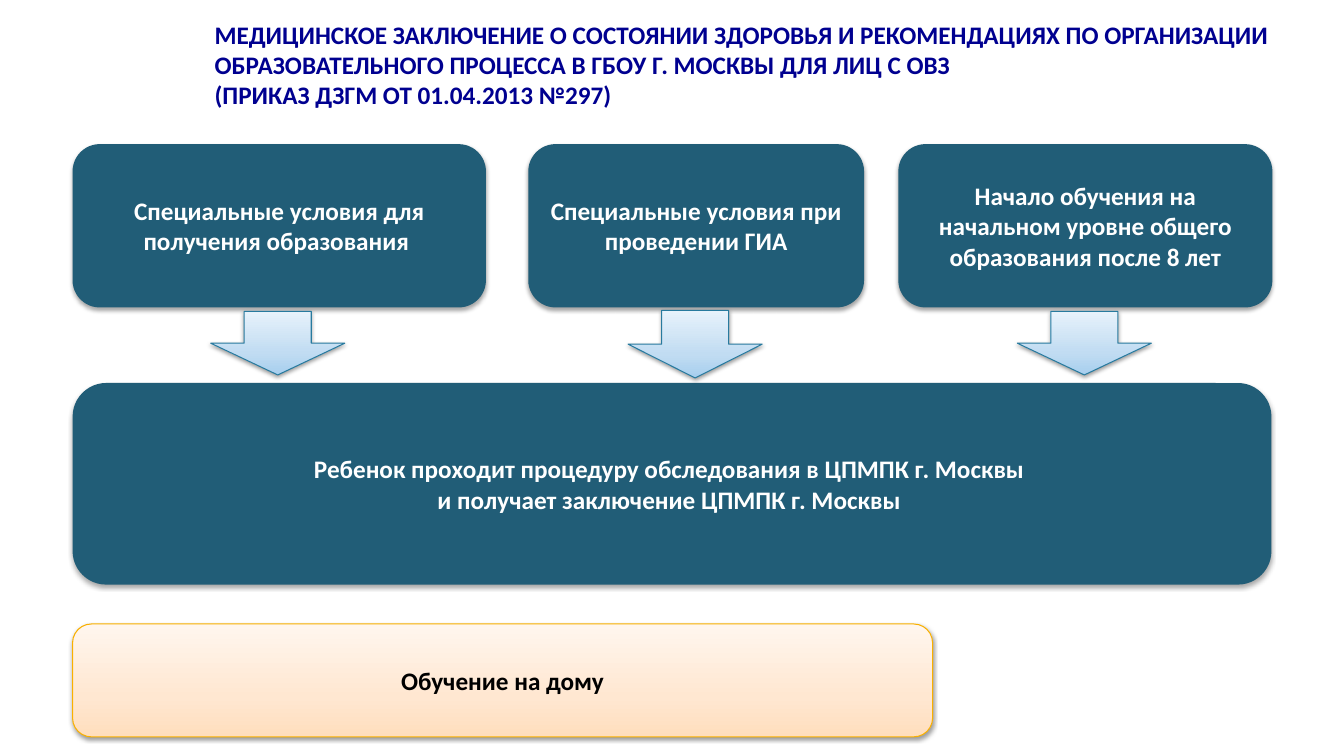
import copy
from dataclasses import dataclass

import pptx
import pptx.util
from pptx.dml.color import RGBColor
from pptx.enum.shapes import MSO_SHAPE
from pptx.enum.text import MSO_ANCHOR, MSO_AUTO_SIZE, PP_ALIGN
from pptx.oxml import parse_xml
from pptx.oxml.ns import nsdecls, qn
from pptx.util import Inches, Pt


@dataclass(frozen=True)
class Theme:
    font: str = "Calibri"
    text_size: int = 18
    title: str = "000090"
    light_text: str = "FFFFFF"
    dark_text: str = "000000"
    box: str = "215D77"
    arrow_gradient: tuple = ("A6CEEE", "C1DCF2", "E7F2FB")
    arrow_line: str = "287A9E"
    home_gradient: tuple = ("FFDEBD", "FFE7D1", "FFF6EE")
    home_line: str = "F9B000"
    gradient_positions: tuple = (0, 0.35, 1)
    line_width: float = 0.75


THEME = Theme()
LEFT = 0.72
CONDITIONS_TOP, CONDITIONS_HEIGHT = 1.43, 1.62
CONDITIONS = (  # left, width, text
    (LEFT, 4.1, "Специальные условия для получения образования "),
    (5.24, 3.33, "Специальные условия при проведении ГИА"),
    (8.91, 3.71, "Начало обучения на начальном уровне общего образования после 8 лет"),
)
ARROWS = ((2.09, 3.09, 0.63), (6.23, 3.08, 0.67), (10.09, 3.09, 0.63))  # left, top, height
ARROW_WIDTH = 1.33


def format_text(text_frame, color, alignment):
    for paragraph in text_frame.paragraphs:
        paragraph.alignment = alignment
        for run in paragraph.runs:
            run.font.name = THEME.font
            run.font.size = Pt(THEME.text_size)
            run.font.bold = True
            run.font.color.rgb = RGBColor.from_string(color)


def add_shadow(shape, opacity, distance):
    shape.shadow.inherit = False
    effects = shape._element.spPr.find(qn("a:effectLst"))
    effects.append(parse_xml(
        f'<a:outerShdw {nsdecls("a")} blurRad="{Pt(3.1)}" dist="{Pt(distance)}" '
        f'dir="5400000" rotWithShape="0"><a:srgbClr val="000000">'
        f'<a:alpha val="{opacity * 1000}"/></a:srgbClr></a:outerShdw>'))


def add_shape(slide, kind, left, top, width, height):
    return slide.shapes.add_shape(
        kind, Inches(left), Inches(top), Inches(width), Inches(height))


def style_gradient(shape, colors, line_color):
    shape.fill.gradient()
    shape.fill.gradient_angle = 90
    # The default gradient has two stops; a third goes between them
    stop_list = shape._element.spPr.find(".//" + qn("a:gsLst"))
    stop_list.insert(1, copy.deepcopy(stop_list[0]))
    for stop, position, color in zip(
            shape.fill.gradient_stops, THEME.gradient_positions, colors):
        stop.position = position
        stop.color.rgb = RGBColor.from_string(color)
    shape.line.color.rgb = RGBColor.from_string(line_color)
    shape.line.width = Pt(THEME.line_width)
    add_shadow(shape, 38, 1.6)


def write_label(shape, text, color):
    text_frame = shape.text_frame
    text_frame.word_wrap = True
    text_frame.vertical_anchor = MSO_ANCHOR.MIDDLE
    text_frame.paragraphs[0].text = text
    format_text(text_frame, color, PP_ALIGN.CENTER)


def add_dark_box(slide, left, top, width, height, text):
    box = add_shape(slide, MSO_SHAPE.ROUNDED_RECTANGLE, left, top, width, height)
    box.fill.solid()
    box.fill.fore_color.rgb = RGBColor.from_string(THEME.box)
    box.line.fill.background()
    add_shadow(box, 35, 1.8)
    write_label(box, text, THEME.light_text)


def add_arrow(slide, left, top, height):
    arrow = add_shape(slide, MSO_SHAPE.DOWN_ARROW, left, top, ARROW_WIDTH, height)
    style_gradient(arrow, THEME.arrow_gradient, THEME.arrow_line)


def add_home_box(slide, left, top, width, height, text):
    box = add_shape(slide, MSO_SHAPE.ROUNDED_RECTANGLE, left, top, width, height)
    style_gradient(box, THEME.home_gradient, THEME.home_line)
    write_label(box, text, THEME.dark_text)


def add_title(slide, left, top, width, height, text):
    title = slide.shapes.add_textbox(
        Inches(left), Inches(top), Inches(width), Inches(height))
    text_frame = title.text_frame
    text_frame.word_wrap = True
    text_frame.auto_size = MSO_AUTO_SIZE.SHAPE_TO_FIT_TEXT
    text_frame.text = text
    format_text(text_frame, THEME.title, PP_ALIGN.LEFT)


def main():
    presentation = pptx.Presentation()
    presentation.slide_width = Inches(13.33)
    presentation.slide_height = Inches(7.5)
    slide = presentation.slides.add_slide(presentation.slide_layouts[6])

    # Title
    add_title(slide, 2.03, 0.14, 10.79, 1.01,
              "МЕДИЦИНСКОЕ ЗАКЛЮЧЕНИЕ О СОСТОЯНИИ ЗДОРОВЬЯ И РЕКОМЕНДАЦИЯХ "
              "ПО ОРГАНИЗАЦИИ ОБРАЗОВАТЕЛЬНОГО ПРОЦЕССА В ГБОУ Г. МОСКВЫ "
              "ДЛЯ ЛИЦ С ОВЗ\n(ПРИКАЗ ДЗГМ ОТ 01.04.2013 №297)")

    # Conditions that lead to the examination
    for left, width, text in CONDITIONS:
        add_dark_box(slide, left, CONDITIONS_TOP, width, CONDITIONS_HEIGHT, text)

    # Examination
    add_dark_box(slide, LEFT, 3.8, 11.89, 2,
                 "Ребенок проходит процедуру обследования в ЦПМПК г. Москвы \v"
                 "и получает заключение ЦПМПК г. Москвы ")
    for left, top, height in ARROWS:
        add_arrow(slide, left, top, height)

    # Home schooling
    add_home_box(slide, LEFT, 6.19, 8.53, 1.12, "Обучение на дому")

    presentation.save("out.pptx")


if __name__ == "__main__":
    main()
